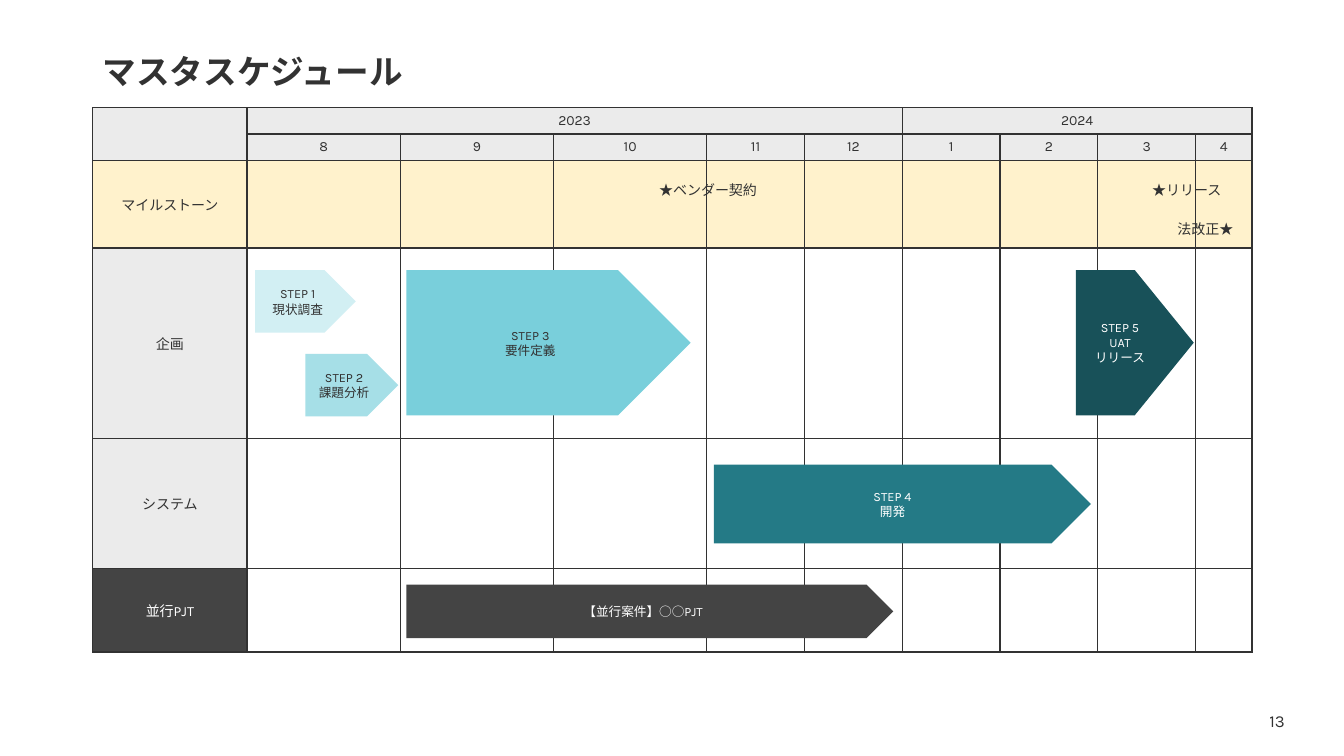
from itertools import product

from lxml import etree
from pptx import Presentation
from pptx.dml.color import RGBColor
from pptx.enum.shapes import MSO_SHAPE
from pptx.enum.text import MSO_ANCHOR, PP_ALIGN
from pptx.oxml.ns import qn
from pptx.util import Inches, Pt

PENTAGON = MSO_SHAPE.PENTAGON
LEFT, CENTER, RIGHT = PP_ALIGN.LEFT, PP_ALIGN.CENTER, PP_ALIGN.RIGHT
TOP, MIDDLE = MSO_ANCHOR.TOP, MSO_ANCHOR.MIDDLE

FONT = "Karla"
INK = RGBColor(0x32, 0x32, 0x32)
WHITE = RGBColor(0xFF, 0xFF, 0xFF)
GREY = RGBColor(0xEB, 0xEB, 0xEB)
CREAM = RGBColor(0xFF, 0xF2, 0xCC)
CHARCOAL = RGBColor(0x44, 0x44, 0x44)
TEALS = [RGBColor.from_string(code) for code in
         ("D2EFF3", "A6DFE7", "79CFDB", "247A86", "185159")]

TITLE = "マスタスケジュール"
PAGE_NUMBER = "13"

# Year, its months
YEARS = [("2023", ["8", "9", "10", "11", "12"]),
         ("2024", ["1", "2", "3", "4"])]
# Label, label fill, label colour, fill of the month cells
LANES = [
    ("マイルストーン", CREAM, INK, CREAM),
    ("企画", GREY, INK, None),
    ("システム", GREY, INK, None),
    ("並行PJT", CHARCOAL, WHITE, None),
]
TABLE_LEFT, TABLE_TOP = 0.92, 1.07
COLUMN_WIDTHS = [1.53] + [1.52] * 3 + [0.97] * 5 + [0.56]
ROW_HEIGHTS = [0.26, 0.26, 0.87, 1.89, 1.29, 0.83]

# Lines of text, (left, top, width, height), fill, text colour
ARROWS = [
    (["STEP 1", "現状調査"], (2.53, 2.68, 1, 0.62), TEALS[0], INK),
    (["STEP 2", "課題分析"], (3.03, 3.51, 0.92, 0.62), TEALS[1], INK),
    (["STEP 3", "要件定義"], (4.03, 2.68, 2.82, 1.44), TEALS[2], INK),
    (["STEP 4", "開発"], (7.08, 4.61, 3.74, 0.78), TEALS[3], WHITE),
    (["STEP 5", "UAT", "リリース"], (10.67, 2.68, 1.17, 1.44), TEALS[4], WHITE),
    (["【並行案件】○○PJT"], (4.03, 5.8, 4.83, 0.53), CHARCOAL, WHITE),
]
MILESTONES = [
    ("★リリース", (11.33, 1.75, 1, 0.27), LEFT),
    ("★ベンダー契約", (6.44, 1.75, 1.27, 0.27), LEFT),
    ("法改正★", (11.33, 2.14, 1, 0.27), RIGHT),
]


def write(frame, lines, size=10, color=INK, bold=False, align=CENTER,
          anchor=MIDDLE, spacing=None):
    """Fill a text frame with one paragraph per line."""
    frame.word_wrap = True
    frame.vertical_anchor = anchor
    for index, line in enumerate(lines):
        paragraph = frame.add_paragraph() if index else frame.paragraphs[0]
        paragraph.alignment = align
        paragraph.line_spacing = spacing
        run = paragraph.add_run()
        run.text = line
        run.font.name = FONT
        run.font.size = Pt(size)
        run.font.bold = bold
        run.font.color.rgb = color


def add_text(slide, text, box, **text_format):
    shape = slide.shapes.add_textbox(*map(Inches, box))
    write(shape.text_frame, [text], **text_format)


def add_arrow(slide, lines, box, fill, color):
    shape = slide.shapes.add_shape(PENTAGON, *map(Inches, box))
    shape.shadow.inherit = False
    shape.fill.solid()
    shape.fill.fore_color.rgb = fill
    shape.line.fill.background()
    write(shape.text_frame, lines, size=9, color=color)


def style_cell(cell, fill):
    """Give a cell a thin border on each side, a fill and small empty text."""
    cell.margin_top = cell.margin_bottom = Inches(0.02)
    cell.vertical_anchor = MIDDLE
    properties = cell._tc.get_or_add_tcPr()
    for side in ("a:lnL", "a:lnR", "a:lnT", "a:lnB"):
        line = etree.SubElement(properties, qn(side), w=str(Pt(1)))
        solid = etree.SubElement(line, qn("a:solidFill"))
        etree.SubElement(solid, qn("a:srgbClr"), val=str(INK))
    if fill is None:
        cell.fill.background()
    else:
        cell.fill.solid()
        cell.fill.fore_color.rgb = fill
    paragraph = cell.text_frame.paragraphs[0]
    etree.SubElement(paragraph._p, qn("a:endParaRPr"), sz="1000")


def add_schedule(slide):
    row_count, column_count = len(ROW_HEIGHTS), len(COLUMN_WIDTHS)
    frame = slide.shapes.add_table(
        row_count, column_count, Inches(TABLE_LEFT), Inches(TABLE_TOP),
        Inches(sum(COLUMN_WIDTHS)), Inches(sum(ROW_HEIGHTS)))
    table = frame.table
    table.first_row = table.horz_banding = False
    for column, width in zip(table.columns, COLUMN_WIDTHS):
        column.width = Inches(width)
    for row, height in zip(table.rows, ROW_HEIGHTS):
        row.height = Inches(height)

    header_rows = row_count - len(LANES)
    for row, column in product(range(row_count), range(column_count)):
        if row < header_rows:
            fill = GREY
        else:
            _, label_fill, _, month_fill = LANES[row - header_rows]
            fill = month_fill if column else label_fill
        style_cell(table.cell(row, column), fill)

    table.cell(0, 0).merge(table.cell(1, 0))
    start = 1
    for year, months in YEARS:
        year_cell = table.cell(0, start)
        year_cell.merge(table.cell(0, start + len(months) - 1))
        write(year_cell.text_frame, [year])
        for column, month in enumerate(months, start):
            write(table.cell(1, column).text_frame, [month])
        start += len(months)
    for row, (label, _, color, _) in enumerate(LANES, header_rows):
        write(table.cell(row, 0).text_frame, [label], color=color)


def main():
    presentation = Presentation()
    presentation.slide_width = Inches(13.33)
    presentation.slide_height = Inches(7.5)
    slide = presentation.slides.add_slide(presentation.slide_layouts[6])

    add_text(slide, TITLE, (0.92, 0.4, 11.5, 0.67), size=24, bold=True,
             align=LEFT, spacing=0.9)
    add_text(slide, PAGE_NUMBER, (12.42, 6.95, 0.49, 0.4), size=12)
    add_schedule(slide)
    for arrow in ARROWS:
        add_arrow(slide, *arrow)
    for text, box, align in MILESTONES:
        add_text(slide, text, box, align=align, anchor=TOP)
    presentation.save("out.pptx")


if __name__ == "__main__":
    main()
